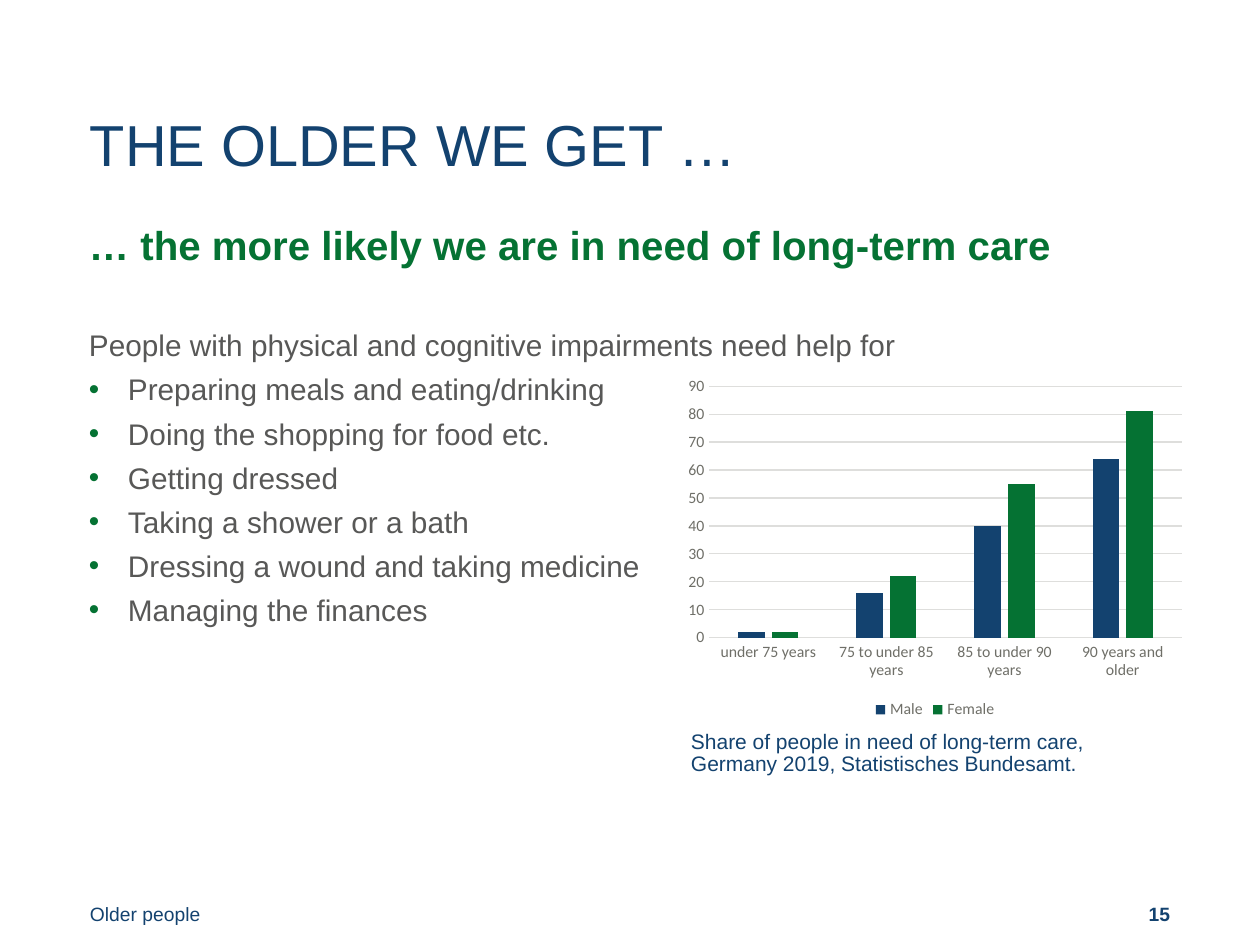
from lxml.etree import SubElement
from pptx import Presentation
from pptx.chart.data import CategoryChartData
from pptx.dml.color import RGBColor
from pptx.enum.chart import XL_CHART_TYPE, XL_LEGEND_POSITION, XL_TICK_MARK
from pptx.enum.text import MSO_ANCHOR, PP_ALIGN
from pptx.oxml.ns import qn
from pptx.util import Emu, Pt

NAVY, GREEN, GRAY = "13426F", "057233", "585857"
AXIS_TEXT, GRID = "6F6F68", "DEDEDC"

HELP_NEEDS = [
    "Preparing meals and eating/drinking",
    "Doing the shopping for food etc.",
    "Getting dressed",
    "Taking a shower or a bath",
    "Dressing a wound and taking medicine",
    "Managing the finances",
]
AGE_GROUPS = ["under 75 years", "75 to under 85 years", "85 to under 90 years", "90 years and older"]
CARE_SHARES = [("Male", NAVY, (2, 16, 40, 64)), ("Female", GREEN, (2, 22, 55, 81))]


def px(length):
    return Emu(round(length * 914400 / 126))


def color(code):
    return RGBColor.from_string(code)


def style_font(font, size, code, bold=False, name="Arial"):
    font.name = name
    font.size = Pt(size)
    font.bold = bold
    font.color.rgb = color(code)


def add_frame(slide, box, insets, anchor=MSO_ANCHOR.TOP):
    frame = slide.shapes.add_textbox(*map(px, box)).text_frame
    frame.word_wrap = True
    frame.vertical_anchor = anchor
    frame.margin_left, frame.margin_top, frame.margin_right, frame.margin_bottom = map(px, insets)
    return frame


def write(paragraph, text, size, code, spacing, bold=False, before=0):
    paragraph.text = text
    paragraph.line_spacing = spacing
    paragraph.space_before = Pt(before)
    style_font(paragraph.font, size, code, bold)


def add_bullet(paragraph, indent, code):
    properties = paragraph._p.get_or_add_pPr()
    properties.set("marL", str(px(indent)))
    properties.set("indent", str(-px(indent)))
    SubElement(SubElement(properties, qn("a:buClr")), qn("a:srgbClr"), val=code)
    SubElement(properties, qn("a:buFont"), typeface="Arial")
    SubElement(properties, qn("a:buChar"), char="•")


def add_title(slide, box):
    frame = add_frame(slide, box, (89, 6, 13, 6), MSO_ANCHOR.MIDDLE)
    write(frame.paragraphs[0], "THE OLDER WE GET …", 33, NAVY, Pt(34))


def add_body(slide, box):
    frame = add_frame(slide, box, (89, 0, 0, 0))
    write(frame.paragraphs[0], "… the more likely we are in need of long-term care", 23, GREEN, Pt(27), bold=True)
    write(frame.add_paragraph(), "People with physical and cognitive impairments need help for",
          17, GRAY, Pt(27), before=27)
    for need in HELP_NEEDS:
        item = frame.add_paragraph()
        add_bullet(item, 39, GREEN)
        write(item, need, 17, GRAY, Pt(19.2), before=6)


def style_axis(axis):
    axis.major_tick_mark = axis.minor_tick_mark = XL_TICK_MARK.NONE
    style_font(axis.tick_labels.font, 9, AXIS_TEXT, name="Calibri")


def style_line(line):
    line.color.rgb = color(GRID)
    line.width = Pt(0.75)


def add_care_chart(slide, box):
    care = CategoryChartData(number_format="0")
    care.categories = AGE_GROUPS
    for sex, _, shares in CARE_SHARES:
        care.add_series(sex, shares)
    chart = slide.shapes.add_chart(XL_CHART_TYPE.COLUMN_CLUSTERED, *map(px, box), care).chart
    style_font(chart.font, 10, "1D1D1B", name="Calibri")
    chart.has_title = False

    chart.has_legend = True
    chart.legend.position = XL_LEGEND_POSITION.BOTTOM
    chart.legend.include_in_layout = False
    style_font(chart.legend.font, 9, AXIS_TEXT, name="Calibri")

    ages, share = chart.category_axis, chart.value_axis
    style_axis(ages)
    style_axis(share)
    style_line(ages.format.line)
    style_line(share.major_gridlines.format.line)
    share.format.line.fill.background()
    share.minimum_scale, share.maximum_scale, share.major_unit = 0, 90, 10
    share.tick_labels.number_format = "0"
    share.tick_labels.number_format_is_linked = False

    columns = chart.plots[0]
    columns.vary_by_categories = False
    columns.gap_width = 219
    columns.overlap = -27
    for series, (_, code, _) in zip(columns.series, CARE_SHARES):
        series.format.fill.solid()
        series.format.fill.fore_color.rgb = color(code)


def add_caption(slide, box):
    frame = add_frame(slide, box, (13, 6, 13, 6))
    write(frame.paragraphs[0],
          "Share of people in need of long-term care, Germany 2019, Statistisches Bundesamt.",
          12, NAVY, 0.9)


def add_footer(slide, box):
    left, top, width, height = box
    topic = add_frame(slide, (left, top, 426, height), (89, 6, 0, 20), MSO_ANCHOR.BOTTOM)
    write(topic.paragraphs[0], "Older people", 11, NAVY, Pt(13.3))
    number_width = 256
    number = add_frame(slide, (left + width - number_width, top, number_width, height),
                       (0, 6, 89, 20), MSO_ANCHOR.BOTTOM)
    write(number.paragraphs[0], "15", 11, NAVY, Pt(13.3), bold=True)
    number.paragraphs[0].alignment = PP_ALIGN.RIGHT


def main():
    presentation = Presentation()
    presentation.slide_width, presentation.slide_height = px(1260), px(945)
    slide = presentation.slides.add_slide(presentation.slide_layouts[6])
    add_footer(slide, (1, 868, 1258, 76))
    add_body(slide, (0, 221, 1169, 630))
    add_title(slide, (1, 93, 1086, 111))
    add_caption(slide, (678, 725, 451, 76))
    add_care_chart(slide, (678, 370, 514, 354))
    presentation.save("out.pptx")


if __name__ == "__main__":
    main()
